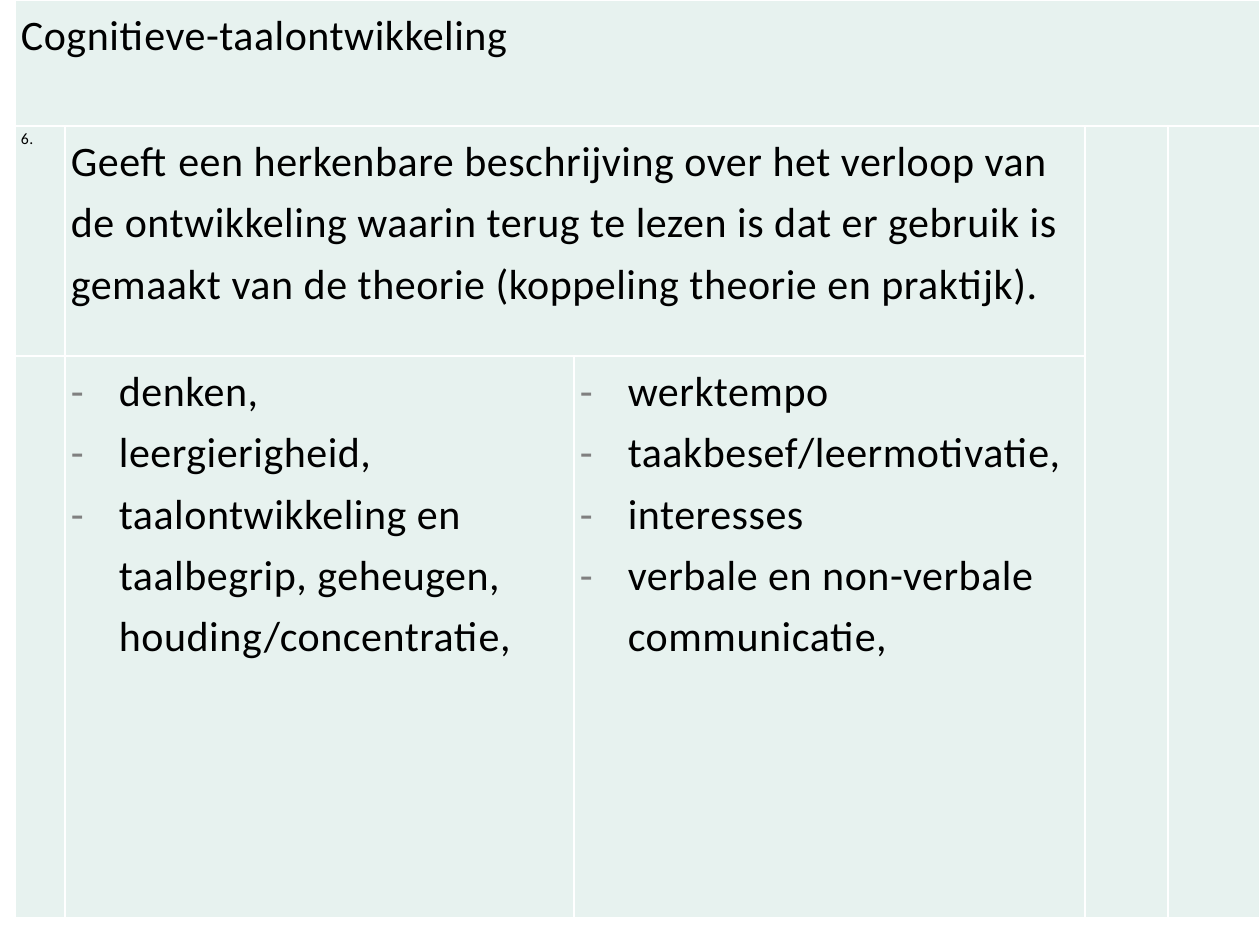
from lxml import etree
from pptx import Presentation
from pptx.dml.color import RGBColor
from pptx.oxml.ns import qn
from pptx.util import Emu, Pt

EMU_PER_PX = 914400 / 126
FONT = "Calibri"
TEXT, PANEL, BORDER, DASH = "000000", "E7F2EF", "FFFFFF", "808080"

COLUMNS = [50, 509, 511, 83, 92]
ROWS = [126, 230, 562]
# First and last (row, column) of each merged area
MERGES = [((0, 0), (0, 4)), ((1, 1), (1, 2)), ((1, 3), (2, 3)), ((1, 4), (2, 4))]

HEADING = "Cognitieve-taalontwikkeling"
CRITERION = (
    "Geeft een herkenbare beschrijving over het verloop van de ontwikkeling "
    "waarin terug te lezen is dat er gebruik is gemaakt van de theorie "
    "(koppeling theorie en praktijk)."
)
THINKING = [
    "denken,",
    "leergierigheid,",
    "taalontwikkeling en taalbegrip, geheugen, houding/concentratie,",
]
WORKING = [
    "werktempo",
    "taakbesef/leermotivatie,",
    "interesses",
    "verbale en non-verbale communicatie,",
]


def px(length):
    return Emu(round(length * EMU_PER_PX))


def color(value):
    return RGBColor.from_string(value)


def style_cell(cell):
    """Give a cell its fill, margins and thin white borders."""
    cell.fill.solid()
    cell.fill.fore_color.rgb = color(PANEL)
    cell.margin_left = cell.margin_right = px(6)
    cell.margin_top = cell.margin_bottom = 0
    properties = cell._tc.get_or_add_tcPr()
    for position, side in enumerate(("lnL", "lnR", "lnT", "lnB")):
        line = etree.Element(qn(f"a:{side}"), w=str(Pt(1)))
        fill = etree.SubElement(line, qn("a:solidFill"))
        etree.SubElement(fill, qn("a:srgbClr"), val=BORDER)
        properties.insert(position, line)


def add_dash(paragraph):
    """Hang the paragraph on a grey dash."""
    properties = paragraph._p.get_or_add_pPr()
    properties.set("marL", str(px(48)))
    properties.set("indent", str(-px(48)))
    bullet_color = etree.SubElement(properties, qn("a:buClr"))
    etree.SubElement(bullet_color, qn("a:srgbClr"), val=DASH)
    etree.SubElement(properties, qn("a:buFont"), typeface=FONT)
    etree.SubElement(properties, qn("a:buChar"), char="-")


def write_cell(cell, lines, size=24, dashed=False):
    frame = cell.text_frame
    for number, line in enumerate(lines):
        paragraph = frame.add_paragraph() if number else frame.paragraphs[0]
        if dashed:
            add_dash(paragraph)
        paragraph.line_spacing = 1.2
        run = paragraph.add_run()
        run.text = line
        run.font.name = FONT
        run.font.size = Pt(size)
        run.font.color.rgb = color(TEXT)
        run.font._element.set("spc", "30")


def add_grid(slide):
    frame = slide.shapes.add_table(
        len(ROWS), len(COLUMNS), px(15), 0, px(sum(COLUMNS)), px(sum(ROWS))
    )
    table = frame.table
    table.first_row = table.horz_banding = False
    for column, width in zip(table.columns, COLUMNS):
        column.width = px(width)
    for row, height in zip(table.rows, ROWS):
        row.height = px(height)
    for cell in table.iter_cells():
        style_cell(cell)
    for first, last in MERGES:
        table.cell(*first).merge(table.cell(*last))
    return table


def main():
    deck = Presentation()
    deck.slide_width, deck.slide_height = px(1260), px(945)
    slide = deck.slides.add_slide(deck.slide_layouts[6])
    criteria = add_grid(slide)

    # Heading and numbered criterion
    write_cell(criteria.cell(0, 0), [HEADING])
    write_cell(criteria.cell(1, 0), ["6."], size=9)
    write_cell(criteria.cell(1, 1), [CRITERION])

    # Points of attention
    write_cell(criteria.cell(2, 1), THINKING, dashed=True)
    write_cell(criteria.cell(2, 2), WORKING, dashed=True)

    deck.save("out.pptx")


if __name__ == "__main__":
    main()
